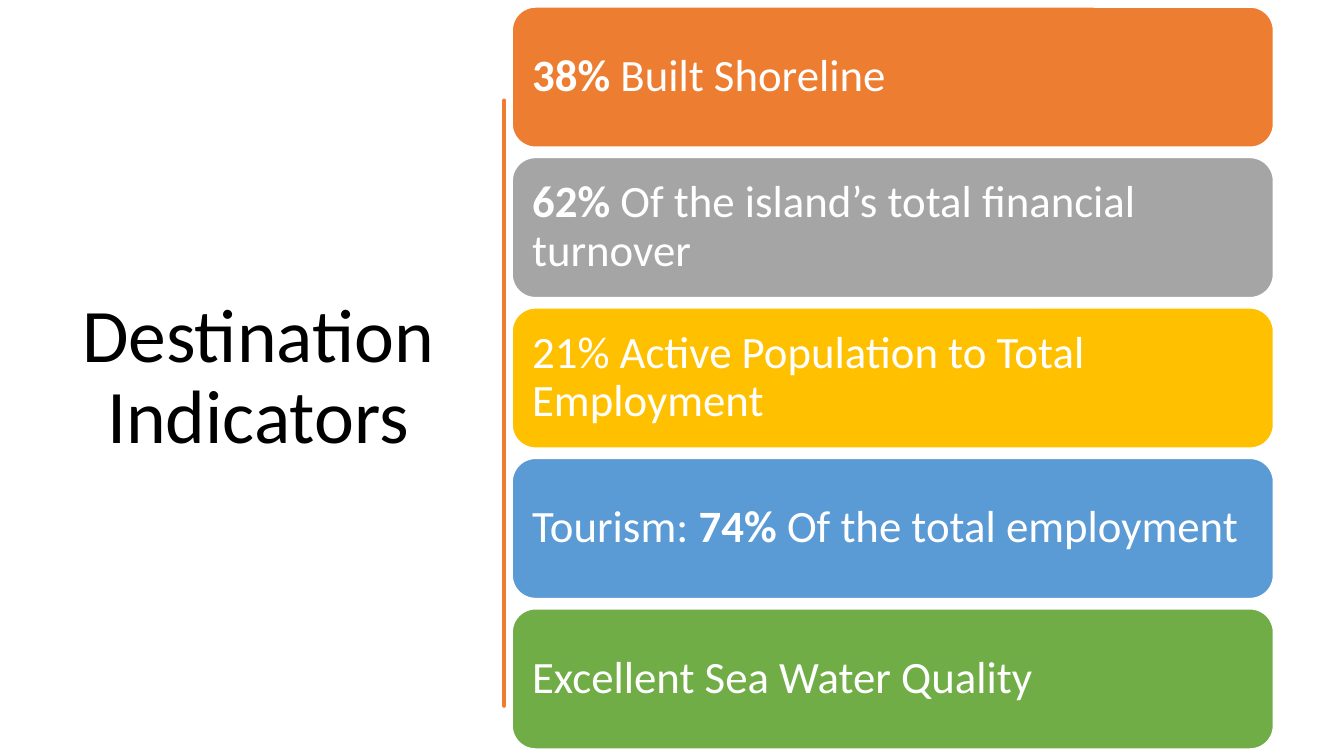
from pptx import Presentation
from pptx.dml.color import RGBColor
from pptx.enum.shapes import MSO_SHAPE
from pptx.enum.text import MSO_ANCHOR, PP_ALIGN
from pptx.util import Inches, Pt

ROUNDED = MSO_SHAPE.ROUNDED_RECTANGLE
MIDDLE = MSO_ANCHOR.MIDDLE
LEFT, CENTER = PP_ALIGN.LEFT, PP_ALIGN.CENTER

FONT = "Calibri"
COLORS = {
    "black": "000000",
    "white": "FFFFFF",
    "orange": "ED7D31",
    "gray": "A5A5A5",
    "gold": "FFC000",
    "blue": "5B9BD5",
    "green": "70AD47",
}

TITLE = "Destination Indicators"
INDICATORS = [
    ("orange", [("38% ", True), ("Built Shoreline", False)]),
    ("gray", [("62%", True), (" Of the island’s total financial turnover", False)]),
    ("gold", [("21% Active Population to Total Employment", False)]),
    ("blue", [("Tourism: ", False), ("74%", True), (" Of the total employment", False)]),
    ("green", [("Excellent Sea Water Quality", False)]),
]
DIVIDER_OUTLINE = [
    (4.75, 0.84), (4.76, 1.15), (4.75, 1.46), (4.74, 1.86), (4.75, 2.26),
    (4.75, 2.94), (4.74, 3.25), (4.75, 3.56), (4.76, 3.96), (4.75, 4.36),
    (4.73, 4.73), (4.75, 5.1), (4.76, 5.47), (4.75, 5.84), (4.74, 6.3),
    (4.75, 6.76), (4.73, 6.76), (4.72, 6.45), (4.73, 6.13), (4.73, 5.57),
    (4.73, 4.77), (4.72, 4.46), (4.73, 4.15), (4.73, 3.35), (4.72, 2.93),
    (4.73, 2.5), (4.74, 2.16), (4.73, 1.81), (4.74, 1.33), (4.73, 0.84),
]

CARD_LEFT, CARD_WIDTH, CARD_HEIGHT = 5.08, 7.55, 1.39
FIRST_TOP, LAST_TOP = 0.07, 6.04
CARD_PITCH = (LAST_TOP - FIRST_TOP) / (len(INDICATORS) - 1)
CARD_INSET = Inches(0.13)


def color(name):
    return RGBColor.from_string(COLORS[name])


def paint(shape, fill, line, line_width):
    shape.shadow.inherit = False
    shape.fill.solid()
    shape.fill.fore_color.rgb = color(fill)
    shape.line.color.rgb = color(line)
    shape.line.width = Pt(line_width)


def write(shape, pieces, size, text_color, alignment):
    frame = shape.text_frame
    frame.word_wrap = True
    frame.vertical_anchor = MIDDLE
    paragraph = frame.paragraphs[0]
    paragraph.alignment = alignment
    paragraph.line_spacing = 0.9
    for text, bold in pieces:
        run = paragraph.add_run()
        run.text = text
        run.font.name = FONT
        run.font.size = Pt(size)
        run.font.bold = bold
        run.font.color.rgb = color(text_color)
    return frame


def add_title(slide):
    title = slide.shapes.add_textbox(Inches(0.69), Inches(0.7), Inches(3.74), Inches(6.11))
    write(title, [(TITLE, False)], 54, "black", CENTER)


def add_divider(slide):
    start, *rest = DIVIDER_OUTLINE
    builder = slide.shapes.build_freeform(*start, scale=Inches(1))
    builder.add_line_segments(rest, close=True)
    paint(builder.convert_to_shape(), "orange", "orange", 3.25)


def add_card(slide, index, fill, pieces):
    top = FIRST_TOP + index * CARD_PITCH
    card = slide.shapes.add_shape(
        ROUNDED, Inches(CARD_LEFT), Inches(top), Inches(CARD_WIDTH), Inches(CARD_HEIGHT)
    )
    paint(card, fill, "white", 1)
    frame = write(card, pieces, 32, "white", LEFT)
    frame.margin_left = frame.margin_right = CARD_INSET
    frame.margin_top = frame.margin_bottom = CARD_INSET


def main():
    presentation = Presentation()
    presentation.slide_width = Inches(13.33)
    presentation.slide_height = Inches(7.5)
    slide = presentation.slides.add_slide(presentation.slide_layouts[6])
    add_title(slide)
    add_divider(slide)
    for index, (fill, pieces) in enumerate(INDICATORS):
        add_card(slide, index, fill, pieces)
    presentation.save("out.pptx")


if __name__ == "__main__":
    main()
